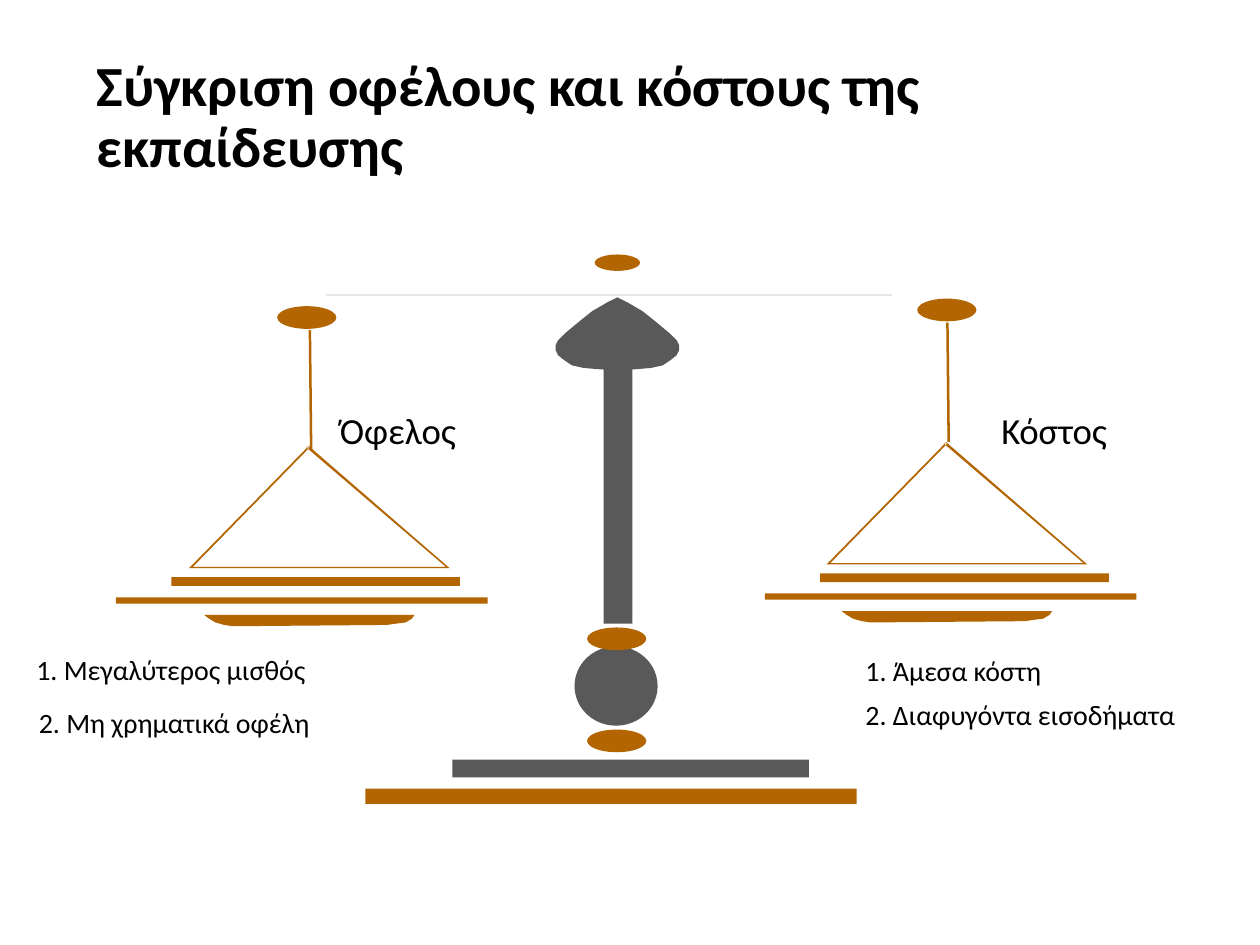
from lxml.etree import SubElement
from pptx import Presentation
from pptx.dml.color import RGBColor
from pptx.enum.shapes import MSO_CONNECTOR, MSO_SHAPE
from pptx.enum.text import MSO_ANCHOR
from pptx.oxml.ns import qn
from pptx.util import Inches, Pt

BLACK = RGBColor(0x00, 0x00, 0x00)
GRAY = RGBColor(0x59, 0x59, 0x59)
BRONZE = RGBColor(0xB2, 0x65, 0x00)
PALE = RGBColor(0xE7, 0xE6, 0xE6)

# Outlines of the left pan
CORDS = [(2.46, 3.55), (2.43, 3.55), (3.54, 4.5), (3.55, 4.5), (1.52, 4.5),
         (1.53, 4.5), (2.46, 3.55), (2.45, 3.54), (1.5, 4.51), (3.57, 4.51),
         (2.45, 3.54)]
WIRE = [(2.45, 2.62), (2.46, 3.57), (2.48, 3.57), (2.47, 2.62)]
BOWL = [(3.29, 4.88), (1.62, 4.88), (1.66, 4.91), (1.71, 4.94), (1.78, 4.96),
        (1.85, 4.97), (3.07, 4.96), (3.14, 4.95), (3.22, 4.94), (3.27, 4.91)]

# Right half of the cap: distance from the axis, height on the slide
CAP_AXIS = 4.9
CAP_HALF = [(0, 2.36), (0.08, 2.4), (0.2, 2.47), (0.3, 2.55), (0.42, 2.65),
            (0.47, 2.7), (0.49, 2.74), (0.49, 2.78), (0.47, 2.82), (0.42, 2.86),
            (0.36, 2.9), (0.27, 2.92), (0.16, 2.93), (0, 2.94)]


class Board:
    def __init__(self, slide, font="Calibri"):
        self.s = slide
        self.font = font

    def text(self, text, x, y, w, h, *, size=16, bold=False, wrap=False,
             anchor=MSO_ANCHOR.TOP, spacing=None):
        tf = self.s.shapes.add_textbox(Inches(x), Inches(y), Inches(w), Inches(h)).text_frame
        tf.word_wrap = wrap
        tf.vertical_anchor = anchor
        p = tf.paragraphs[0]
        p.line_spacing = spacing
        r = p.add_run()
        r.text = text
        r.font.name = self.font
        r.font.size = Pt(size)
        r.font.bold = bold
        r.font.color.rgb = BLACK

    def paint(self, sp, color):
        sp.shadow.inherit = False
        sp.fill.solid()
        sp.fill.fore_color.rgb = color
        sp.line.fill.background()

    def preset(self, kind, x, y, w, h, color):
        self.paint(self.s.shapes.add_shape(kind, Inches(x), Inches(y), Inches(w), Inches(h)), color)

    def bar(self, x, y, w, h, color=BRONZE):
        self.preset(MSO_SHAPE.RECTANGLE, x, y, w, h, color)

    def oval(self, x, y, w=0.47, h=0.18, color=BRONZE):
        self.preset(MSO_SHAPE.OVAL, x, y, w, h, color)

    def outline(self, points, color=BRONZE, dx=0, dy=0):
        pts = [(Inches(x + dx), Inches(y + dy)) for x, y in points]
        builder = self.s.shapes.build_freeform(*pts[0])
        builder.add_line_segments(pts[1:], close=True)
        self.paint(builder.convert_to_shape(), color)

    def line(self, x1, y1, x2, y2, color, width):
        ln = self.s.shapes.add_connector(MSO_CONNECTOR.STRAIGHT, Inches(x1), Inches(y1),
                                         Inches(x2), Inches(y2))
        ln.line.color.rgb = color
        ln.line.width = Pt(width)
        SubElement(ln._element.spPr, qn("a:effectLst"))

    def pan(self, dx=0, dy=0, plate_dx=0):
        """Hanging pan, moved from the left one; the plates have their own shift."""
        self.outline(CORDS, dx=dx, dy=dy)
        self.outline(WIRE, dx=dx, dy=dy - 0.03 if dy else 0)
        self.bar(0.92 + plate_dx, 4.74 + dy, 2.95, 0.05)
        self.bar(1.36 + plate_dx, 4.58 + dy, 2.29, 0.07)
        self.outline(BOWL, dx=dx, dy=dy)


def main():
    prs = Presentation()
    prs.slide_width, prs.slide_height = Inches(10), Inches(7.5)
    b = Board(prs.slides.add_slide(prs.slide_layouts[6]))

    b.text("Σύγκριση οφέλους και κόστους της εκπαίδευσης", 0.67, 0.68, 8.83, 0.52,
           size=32.4, bold=True, wrap=True, anchor=MSO_ANCHOR.MIDDLE, spacing=0.9)
    for label, x in (("Όφελος", 2.6), ("Κόστος", 7.85)):
        b.text(label, x, 3.23, 1.2, 0.42, size=21, spacing=0.9)

    b.bar(4.79, 2.86, 0.23, 2.09, GRAY)
    b.pan(dx=5.06, dy=-0.03, plate_dx=5.15)
    b.oval(7.28, 2.37)
    b.oval(2.2, 2.43)
    b.pan()

    b.oval(4.72, 2.02, 0.36, 0.13)
    right = [(CAP_AXIS + d, y) for d, y in CAP_HALF]
    left = [(CAP_AXIS - d, y) for d, y in CAP_HALF[-2:0:-1]]
    b.outline(right + left, GRAY)
    b.oval(4.56, 5.13, 0.66, 0.63, GRAY)
    for y in (5.79, 4.98):
        b.oval(4.66, y)
    b.bar(3.59, 6.03, 2.83, 0.14, GRAY)
    b.bar(2.9, 6.26, 3.9, 0.12)
    b.line(2.59, 2.34, 7.08, 2.34, PALE, 1)

    for item, x, y, w in (("1. Μεγαλύτερος μισθός", 0.19, 5.13, 2.37),
                          ("2. Μη χρηματικά οφέλη", 0.21, 5.55, 2.38),
                          ("1. Άμεσα κόστη", 6.77, 5.14, 1.62),
                          ("2. Διαφυγόντα εισοδήματα", 6.77, 5.49, 2.73)):
        b.text(item, x, y, w, 0.37)

    prs.save("out.pptx")


if __name__ == "__main__":
    main()
